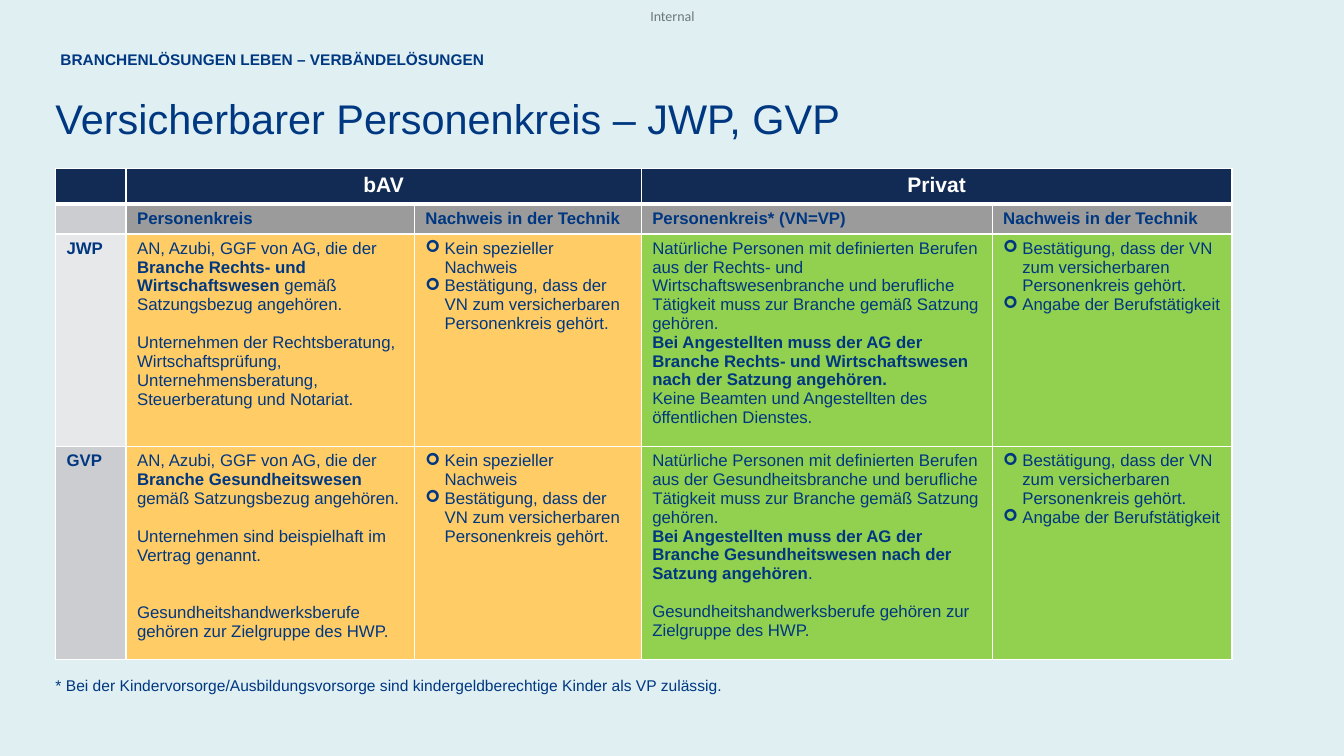
from lxml.etree import SubElement
from pptx import Presentation
from pptx.dml.color import RGBColor
from pptx.enum.text import MSO_ANCHOR, PP_ALIGN
from pptx.oxml.ns import qn
from pptx.util import Inches, Pt

BLUE = RGBColor(0x00, 0x37, 0x81)
NAVY = RGBColor(0x12, 0x2B, 0x54)
WHITE = RGBColor(0xFF, 0xFF, 0xFF)
BLACK = RGBColor(0x00, 0x00, 0x00)
SKY = RGBColor(0xDF, 0xEF, 0xF2)
GREY = RGBColor(0x9B, 0x9B, 0x9B)
SILVER = RGBColor(0xCC, 0xCD, 0xD1)
PALE = RGBColor(0xE7, 0xE8, 0xE9)
ORANGE = RGBColor(0xFF, 0xCC, 0x66)
GREEN = RGBColor(0x92, 0xD0, 0x50)

LINE = 13.8  # height of one 12 pt line
COLS = [0.7, 2.86, 2.25, 3.48, 2.38]
ROWS = [0.35, 0.3, 2.11, 2.11]
HEADS = ["", "Personenkreis", "Nachweis in der Technik",
         "Personenkreis* (VN=VP)", "Nachweis in der Technik"]
FILLS = [ORANGE, ORANGE, GREEN, GREEN]

# Cell texts: a paragraph is (lines of gap, runs), a run is (text, bold)
STAFF = "AN, Azubi, GGF von AG, die der "
BASIS = "gemäß Satzungsbezug angehören."
DUTY = "Tätigkeit muss zur Branche gemäß Satzung gehören."
CRAFT = "Gesundheitshandwerksberufe gehören zur Zielgruppe des HWP."
PROOF = "Bestätigung, dass der VN zum versicherbaren Personenkreis gehört."
WORK = ["Kein spezieller Nachweis", PROOF]
HOME = [PROOF, "Angabe der Berufstätigkeit"]
GROUPS = [
    ("JWP", PALE, [
        (0, [(STAFF, False), ("Branche Rechts- und Wirtschaftswesen ", True),
             (BASIS, False)]),
        (1, [("Unternehmen der Rechtsberatung, Wirtschaftsprüfung, "
              "Unternehmensberatung, Steuerberatung und Notariat.", False)]),
    ], [
        (0, [("Natürliche Personen mit definierten Berufen aus der Rechts- und "
              "Wirtschaftswesenbranche und berufliche " + DUTY, False)]),
        (0, [("Bei Angestellten muss der AG der Branche Rechts- und "
              "Wirtschaftswesen nach der Satzung angehören.", True)]),
        (0, [("Keine Beamten und Angestellten des öffentlichen Dienstes.", False)]),
    ]),
    ("GVP", SILVER, [
        (0, [(STAFF, False), ("Branche Gesundheitswesen ", True), (BASIS, False)]),
        (1, [("Unternehmen sind beispielhaft im Vertrag genannt.", False)]),
        (2, [(CRAFT, False)]),
    ], [
        (0, [("Natürliche Personen mit definierten Berufen aus der "
              "Gesundheitsbranche und berufliche " + DUTY, False)]),
        (0, [("Bei Angestellten muss der AG der Branche Gesundheitswesen nach "
              "der Satzung angehören", True), (".", False)]),
        (1, [(CRAFT, False)]),
    ]),
]


def style(para, size, color=BLUE, bold=None, name="Arial"):
    font = para.font
    font.name, font.size, font.bold = name, Pt(size), bold
    font.color.rgb = color


def place(shape, left, top, width, height):
    shape.left, shape.top = Inches(left), Inches(top)
    shape.width, shape.height = Inches(width), Inches(height)


def set_text(shape, text, size, anchor=MSO_ANCHOR.TOP, wrap=True, **look):
    frame = shape.text_frame
    frame.word_wrap = wrap
    frame.vertical_anchor = anchor
    frame.margin_left = frame.margin_right = 0
    frame.margin_top = frame.margin_bottom = 0
    para = frame.paragraphs[0]
    para.text = text
    para.alignment = PP_ALIGN.LEFT
    style(para, size, **look)
    return para


def add_text(slide, box, text, size, **look):
    shape = slide.shapes.add_textbox(*[Inches(n) for n in box])
    return set_text(shape, text, size, **look)


def add_bullet(para):
    props = para._p.get_or_add_pPr()
    props.set("marL", str(Inches(0.19)))
    props.set("indent", str(-Inches(0.19)))
    SubElement(props, qn("a:buFont"), typeface="Wingdings")
    SubElement(props, qn("a:buChar"), char="➢")


def paint(cell, color, base=1):
    """Draw white borders, then fill the cell."""
    props = cell._tc.get_or_add_tcPr()
    for side in "LRTB":
        width = Pt(base if side == "B" else 1)
        line = SubElement(props, qn("a:ln" + side), w=str(width))
        fill = SubElement(line, qn("a:solidFill"))
        SubElement(fill, qn("a:srgbClr"), val=str(WHITE))
    cell.fill.solid()
    cell.fill.fore_color.rgb = color
    cell.margin_left = cell.margin_right = Inches(0.11)
    cell.margin_top = cell.margin_bottom = Inches(0.05)


def label(cell, text, size=12, color=BLUE, align=PP_ALIGN.LEFT):
    para = cell.text_frame.paragraphs[0]
    para.text = text
    para.alignment = align
    style(para, size, color, True)


def write(cell, paras, bullet=False):
    frame = cell.text_frame
    for i, (gap, runs) in enumerate(paras):
        para = frame.add_paragraph() if i else frame.paragraphs[0]
        if gap:
            para.space_before = Pt(gap * LINE)
        if bullet:
            add_bullet(para)
        style(para, 12)
        for text, bold in runs:
            run = para.add_run()
            run.text = text
            run.font.bold = bold


def add_grid(slide):
    frame = slide.shapes.add_table(
        len(ROWS), len(COLS), Inches(0.55), Inches(1.67),
        Inches(sum(COLS)), Inches(sum(ROWS)))
    grid = frame.table
    grid.horz_banding = False
    for col, width in zip(grid.columns, COLS):
        col.width = Inches(width)
    for row, height in zip(grid.rows, ROWS):
        row.height = Inches(height)

    # Header rows
    for i in range(len(COLS)):
        paint(grid.cell(0, i), NAVY, 3)
        label(grid.cell(0, i), "", 15, WHITE)
    for i, text in ((1, "bAV"), (3, "Privat")):
        grid.cell(0, i).merge(grid.cell(0, i + 1))
        label(grid.cell(0, i), text, 15, WHITE, PP_ALIGN.CENTER)
    for i, text in enumerate(HEADS):
        cell = grid.cell(1, i)
        paint(cell, GREY if text else SILVER)
        cell.vertical_anchor = MSO_ANCHOR.MIDDLE
        label(cell, text)

    # One row per group
    for row, (name, shade, firm, own) in enumerate(GROUPS, 2):
        paint(grid.cell(row, 0), shade)
        label(grid.cell(row, 0), name)
        for i, color in enumerate(FILLS, 1):
            paint(grid.cell(row, i), color)
        write(grid.cell(row, 1), firm)
        write(grid.cell(row, 3), own)
        for i, items in ((2, WORK), (4, HOME)):
            points = [(0, [(item, False)]) for item in items]
            write(grid.cell(row, i), points, bullet=True)


def main():
    deck = Presentation()
    deck.slide_width, deck.slide_height = Inches(13.33), Inches(7.5)
    slide = deck.slides.add_slide(deck.slide_layouts[5])
    slide.background.fill.solid()
    slide.background.fill.fore_color.rgb = SKY

    # Marking at the top, half transparent
    mark = add_text(slide, (6.45, 0.07, 0.47, 0.17), "Internal", 10,
                    wrap=False, color=BLACK, name="Calibri")
    tone = mark._p.find(".//" + qn("a:srgbClr"))
    SubElement(tone, qn("a:alpha"), val="50000")

    # Title and table
    title = slide.shapes.title
    place(title, 0.55, 0.92, 9.27, 0.75)
    set_text(title, "Versicherbarer Personenkreis – JWP, GVP", 29.6)
    add_grid(slide)

    # Footnote and section line
    add_text(slide, (0.55, 6.71, 11.71, 0.18),
             "* Bei der Kindervorsorge/Ausbildungsvorsorge sind "
             "kindergeldberechtige Kinder als VP zulässig.", 11.1)
    head = add_text(slide, (0.6, 0.4, 10.2, 0.28),
                    "BRANCHENLÖSUNGEN LEBEN – VERBÄNDELÖSUNGEN", 11,
                    anchor=MSO_ANCHOR.BOTTOM, bold=True)
    head.line_spacing = 0.9
    deck.save("out.pptx")


if __name__ == "__main__":
    main()
